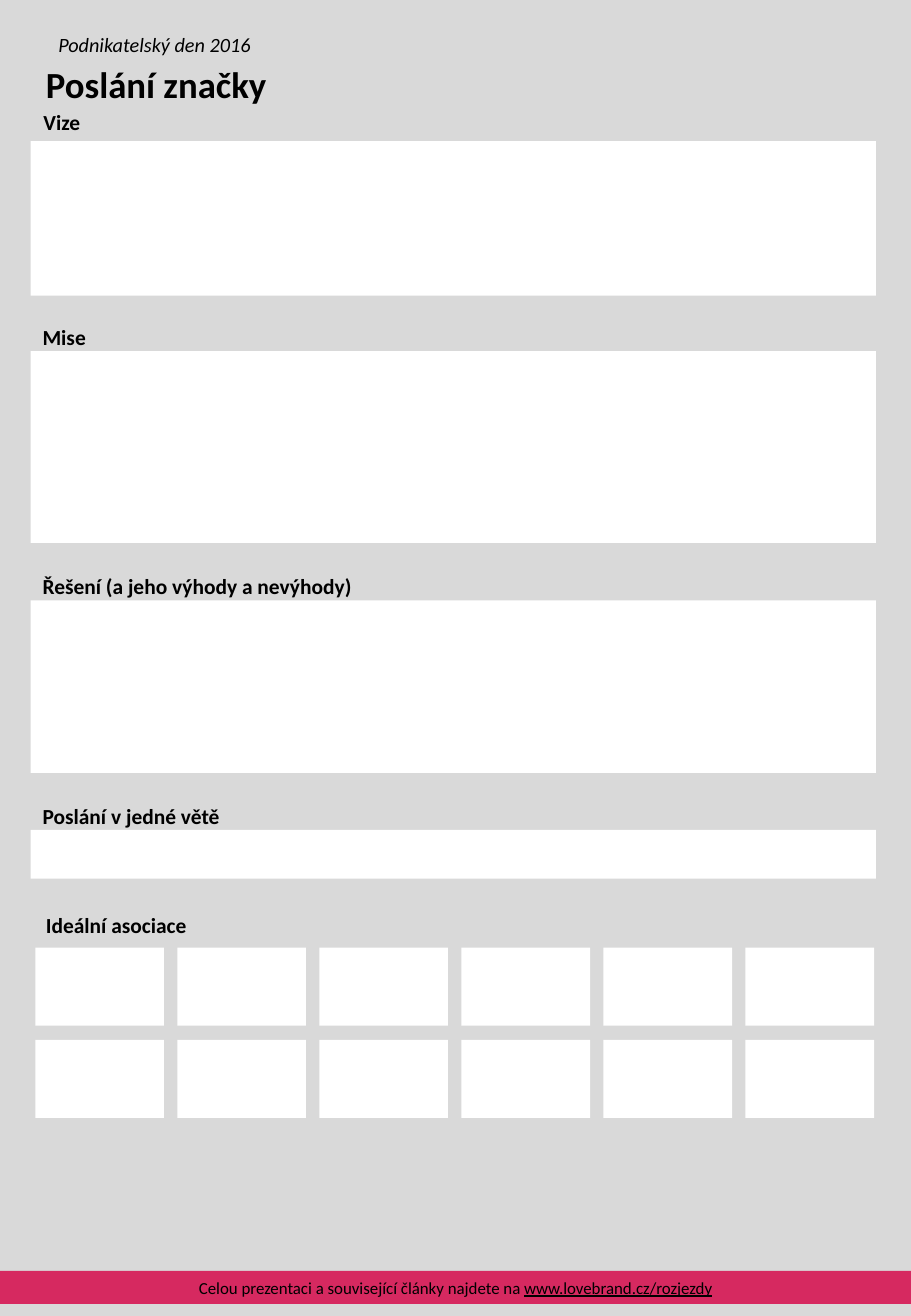
from dataclasses import dataclass

from pptx import Presentation
from pptx import util as u
from pptx.dml.color import RGBColor
from pptx.enum import shapes, text


@dataclass(frozen=True)
class Theme:
    font: str = "Calibri"
    ink: RGBColor = RGBColor(0, 0, 0)
    paper: RGBColor = RGBColor(0xD9, 0xD9, 0xD9)
    field: RGBColor = RGBColor(0xFF, 0xFF, 0xFF)
    accent: RGBColor = RGBColor(0xD6, 0x29, 0x60)
    title: float = 21.8
    heading: float = 12.7
    event: float = 12
    footer: float = 10


THEME = Theme()
PAGE_WIDTH, PAGE_HEIGHT = 19.05, 27.51

EVENT = "Podnikatelský den 2016"
TITLE = "Poslání značky"
SECTIONS = [
    {"heading": "Vize", "left": 0.66, "top": 2.95, "height": 3.23, "rise": 0.79},
    {"heading": "Mise", "left": 0.64, "top": 7.34, "height": 4.01, "rise": 0.69},
    {"heading": "Řešení (a jeho výhody a nevýhody)", "left": 0.64, "top": 12.55,
     "height": 3.61, "rise": 0.69},
    {"heading": "Poslání v jedné větě", "left": 0.64, "top": 17.35,
     "height": 1.02, "rise": 0.69},
]
ASSOCIATIONS = "Ideální asociace"
FOOTER = "Celou prezentaci a související články najdete na "
ADDRESS = "www.lovebrand.cz/rozjezdy"

FIELD_LEFT, FIELD_WIDTH = 0.64, 17.68
HEADING_WIDTH, HEADING_HEIGHT = 9.95, 0.79
GRID_LEFT, GRID_TOP = 0.74, 19.81
GRID_COLUMNS, GRID_ROWS = 6, 2
CELL_WIDTH, CELL_HEIGHT = 2.69, 1.63
COLUMN_STEP, ROW_STEP = 2.97, 1.93


def set_font(paragraph, size, bold=False, italic=False):
    font = paragraph.font
    font.name = THEME.font
    font.size = u.Pt(size)
    font.color.rgb = THEME.ink
    font.bold = bold
    font.italic = italic


def add_label(page, words, left, top, width, height, size, **style):
    box = page.shapes.add_textbox(u.Cm(left), u.Cm(top), u.Cm(width), u.Cm(height))
    box.text_frame.word_wrap = True
    box.text_frame.auto_size = text.MSO_AUTO_SIZE.SHAPE_TO_FIT_TEXT
    para = box.text_frame.paragraphs[0]
    para.text = words
    set_font(para, size, **style)


def add_heading(page, words, left, top):
    add_label(page, words, left, top, HEADING_WIDTH, HEADING_HEIGHT,
              THEME.heading, bold=True)


def add_panel(page, left, top, width, height, color):
    panel = page.shapes.add_shape(shapes.MSO_SHAPE.RECTANGLE,
                                  u.Cm(left), u.Cm(top), u.Cm(width), u.Cm(height))
    panel.shadow.inherit = False
    panel.fill.solid()
    panel.fill.fore_color.rgb = color
    panel.line.fill.background()
    return panel


def add_footer(page):
    band = add_panel(page, 0, 26.57, PAGE_WIDTH, 0.69, THEME.accent)
    band.text_frame.word_wrap = True
    band.text_frame.vertical_anchor = text.MSO_ANCHOR.MIDDLE
    para = band.text_frame.paragraphs[0]
    para.alignment = text.PP_ALIGN.CENTER
    set_font(para, THEME.footer)
    for words, underlined in ((FOOTER, False), (ADDRESS, True)):
        span = para.add_run()
        span.text = words
        span.font.underline = underlined


def main():
    deck = Presentation()
    deck.slide_width, deck.slide_height = u.Cm(PAGE_WIDTH), u.Cm(PAGE_HEIGHT)
    page = deck.slides.add_slide(deck.slide_layouts[6])
    page.background.fill.solid()
    page.background.fill.fore_color.rgb = THEME.paper

    add_footer(page)
    add_label(page, EVENT, 0.97, 0.56, 10.16, 0.76, THEME.event, italic=True)
    add_label(page, TITLE, 0.71, 1.17, 14.15, 1.19, THEME.title, bold=True)

    for section in SECTIONS:
        add_panel(page, FIELD_LEFT, section["top"], FIELD_WIDTH,
                  section["height"], THEME.field)
        add_heading(page, section["heading"], section["left"],
                    section["top"] - section["rise"])

    add_heading(page, ASSOCIATIONS, 0.71, 18.95)
    for row in range(GRID_ROWS):
        for column in range(GRID_COLUMNS):
            add_panel(page, GRID_LEFT + column * COLUMN_STEP,
                      GRID_TOP + row * ROW_STEP,
                      CELL_WIDTH, CELL_HEIGHT, THEME.field)

    deck.save("out.pptx")


if __name__ == "__main__":
    main()
